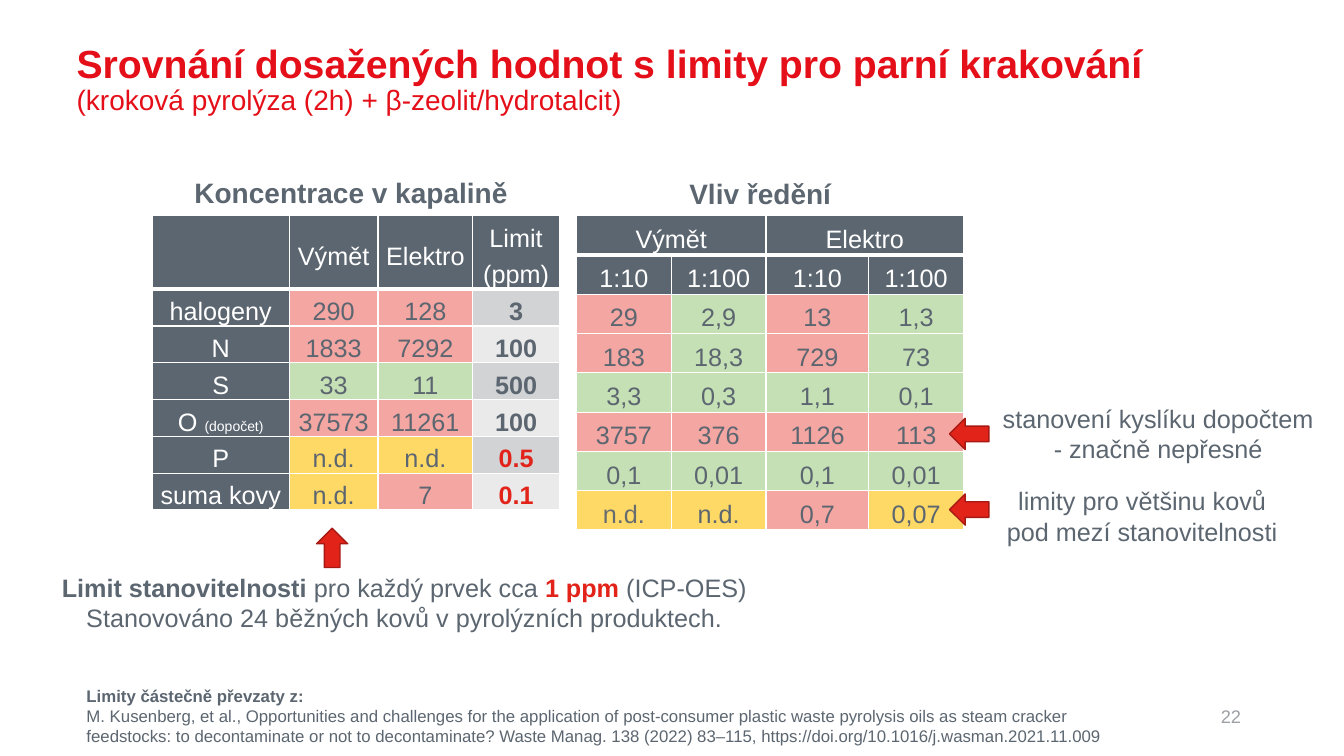
from dataclasses import dataclass

from lxml.etree import SubElement
from pptx import Presentation
from pptx.dml.color import RGBColor
from pptx.enum.shapes import MSO_SHAPE as Shape
from pptx.enum.text import MSO_ANCHOR as Anchor, MSO_AUTO_SIZE as AutoSize, PP_ALIGN as Align
from pptx.oxml.ns import qn
from pptx.util import Inches, Pt

# Grid: 133.33 columns by 75 rows
GRID = Inches(0.1)
SLIDE_COLUMNS, SLIDE_ROWS = 133.33, 75

SLATE, RED, TITLE_RED, WHITE = "5C6670", "E2231A", "E40F18", "FFFFFF"
ROSE, GREEN, YELLOW = "F4A6A2", "C5E0B4", "FFD966"
DARK_BAND, LIGHT_BAND = "D2D3D5", "EAEAEB"


@dataclass(frozen=True)
class Run:
    text: str
    size: float = 18
    color: str = SLATE
    bold: bool = False


@dataclass(frozen=True)
class Box:
    left: float
    top: float
    width: float
    height: float
    paragraphs: list[list[Run]]
    align: Align = Align.LEFT
    anchor: Anchor = Anchor.TOP
    grows: bool = True


@dataclass(frozen=True)
class Arrow:
    left: float
    top: float
    rotation: float


@dataclass(frozen=True)
class CellStyle:
    fill: str
    color: str = SLATE
    bold: bool = False


@dataclass(frozen=True)
class Row:
    styles: str
    texts: tuple[str, ...]


@dataclass(frozen=True)
class DataTable:
    left: float
    top: float
    widths: tuple[float, ...]
    heights: tuple[float, ...]
    rows: list[Row]
    header_spans: tuple[tuple[int, int], ...] = ()


# One letter per cell style
CELL_STYLES = {
    "h": CellStyle(SLATE, WHITE),
    "r": CellStyle(ROSE),
    "g": CellStyle(GREEN),
    "y": CellStyle(YELLOW),
    "u": CellStyle(YELLOW, "676D6F"),
    "d": CellStyle(DARK_BAND, bold=True),
    "l": CellStyle(LIGHT_BAND, bold=True),
    "D": CellStyle(DARK_BAND, RED, True),
    "L": CellStyle(LIGHT_BAND, RED, True),
}

TITLE = [
    [Run("Srovnání dosažených hodnot s limity pro parní krakování", 28, TITLE_RED, True)],
    [Run("(kroková pyrolýza (2h) + β-zeolit/hydrotalcit)", 20, TITLE_RED)],
]

# A bar in a cell starts its small print
TABLES = [
    DataTable(15.1, 21.4, (13.6, 8.8, 9.4, 8.6), (7.3,) + (3.65,) * 6, [
        Row("hhhh", ("", "Výmět", "Elektro", "Limit (ppm)")),
        Row("hrrd", ("halogeny", "290", "128", "3")),
        Row("hrrl", ("N", "1833", "7292", "100")),
        Row("hggd", ("S", "33", "11", "500")),
        Row("hrrl", ("O |(dopočet)", "37573", "11261", "100")),
        Row("hyyD", ("P", "n.d.", "n.d.", "0.5")),
        Row("hyrL", ("suma kovy", "n.d.", "7", "0.1")),
    ]),
    DataTable(57.2, 21.4, (9.4, 9.4, 10.2, 9.4), (3.9,) * 8, [
        Row("hhhh", ("Výmět", "", "Elektro", "")),
        Row("hhhh", ("1:10", "1:100") * 2),
        Row("rgrg", ("29", "2,9", "13", "1,3")),
        Row("rgrg", ("183", "18,3", "729", "73")),
        Row("gggg", ("3,3", "0,3", "1,1", "0,1")),
        Row("rrrr", ("3757", "376", "1126", "113")),
        Row("gggg", ("0,1", "0,01") * 2),
        Row("uyry", ("n.d.", "n.d.", "0,7", "0,07")),
    ], header_spans=((0, 1), (2, 3))),
]

BOXES = [
    Box(18.3, 16.9, 33.9, 4.4, [[Run("Koncentrace v kapalině", 20, bold=True)]]),
    Box(67.4, 17, 16.6, 4.4, [[Run("Vliv ředění", 20, bold=True)]]),
    Box(3.7, 56.3, 72.8, 7.1, [
        [Run("Limit stanovitelnosti ", bold=True), Run("pro každý prvek cca "),
         Run("1 ppm ", color=RED, bold=True), Run("(ICP-OES)")],
        [Run("Stanovováno 24 běžných kovů v pyrolýzních produktech.")],
    ], Align.CENTER),
    Box(98.1, 39.5, 33.6, 7.1,
        [[Run("stanovení kyslíku dopočtem - značně nepřesné")]], Align.CENTER),
    Box(98.2, 47.7, 30.2, 7.1,
        [[Run("limity pro většinu kovů pod mezí stanovitelnosti")]], Align.CENTER),
    Box(7.6, 67.5, 106.4, 7.1, [
        [Run("Limity částečně převzaty z:", 12, bold=True)],
        [Run("M. Kusenberg, et al., Opportunities and challenges for the application of "
             "post-consumer plastic waste pyrolysis oils as steam cracker feedstocks: to "
             "decontaminate or not to decontaminate? Waste Manag. 138 (2022) 83–115, "
             "https://doi.org/10.1016/j.wasman.2021.11.009", 12)],
    ]),
    Box(110.8, 69.9, 13.3, 2.4, [[Run("22", 13, "9CA0A4")]],
        Align.RIGHT, Anchor.MIDDLE, grows=False),
]

ARROWS = [Arrow(31, 52.8, 270), Arrow(94.2, 41.5, 180), Arrow(94.2, 49, 180)]


def grid(*units: float) -> list[int]:
    return [round(unit * GRID) for unit in units]


def rgb(value: str) -> RGBColor:
    return RGBColor.from_string(value)


def apply(target, formats: dict) -> None:
    for name, value in formats.items():
        setattr(target, name, value)


def write_runs(paragraph, runs: list[Run], formats: dict) -> None:
    apply(paragraph, formats)
    for item in runs:
        run = paragraph.add_run()
        run.text = item.text
        apply(run.font, {"name": "Arial", "size": Pt(item.size), "bold": item.bold})
        run.font.color.rgb = rgb(item.color)


def write_paragraphs(frame, paragraphs: list[list[Run]], formats: dict) -> None:
    for index, runs in enumerate(paragraphs):
        paragraph = frame.add_paragraph() if index else frame.paragraphs[0]
        write_runs(paragraph, runs, formats)


def place_title(slide) -> None:
    title = slide.shapes.title
    title.left, title.top, title.width, title.height = grid(7.6, 4.4, 118.9, 8.3)
    apply(title.text_frame, {
        "margin_left": 0, "margin_top": 0, "margin_right": 0, "margin_bottom": 0,
        "vertical_anchor": Anchor.TOP, "word_wrap": True, "auto_size": AutoSize.NONE})
    write_paragraphs(title.text_frame, TITLE, {
        "alignment": Align.LEFT, "line_spacing": 0.9, "space_before": Pt(0)})


def draw_box(slide, box: Box) -> None:
    shape = slide.shapes.add_textbox(*grid(box.left, box.top, box.width, box.height))
    apply(shape.text_frame, {
        "word_wrap": True, "vertical_anchor": box.anchor,
        "auto_size": AutoSize.SHAPE_TO_FIT_TEXT if box.grows else AutoSize.NONE})
    write_paragraphs(shape.text_frame, box.paragraphs, {"alignment": box.align})


def draw_arrow(slide, arrow: Arrow) -> None:
    shape = slide.shapes.add_shape(Shape.RIGHT_ARROW, *grid(arrow.left, arrow.top, 3.9, 3.1))
    apply(shape, {"rotation": arrow.rotation})
    shape.shadow.inherit = False
    shape.fill.solid()
    shape.fill.fore_color.rgb = rgb(RED)
    shape.line.color.rgb = rgb("A71A13")
    shape.line.width = Pt(1)


def add_borders(cell, top: float, bottom: float) -> None:
    properties = cell._tc.get_or_add_tcPr()
    sides = {"a:lnL": 1, "a:lnR": 1, "a:lnT": top, "a:lnB": bottom}
    for index, (tag, width) in enumerate(sides.items()):
        line = SubElement(properties, qn(tag), w=str(Pt(width)))
        SubElement(SubElement(line, qn("a:solidFill")), qn("a:srgbClr"), val=WHITE)
        properties.insert(index, line)  # borders precede the fill


def fill_cell(cell, text: str, style: CellStyle) -> None:
    apply(cell, {
        "margin_left": Inches(0.05), "margin_right": Inches(0.05),
        "margin_top": 0, "margin_bottom": 0, "vertical_anchor": Anchor.MIDDLE})
    cell.fill.solid()
    cell.fill.fore_color.rgb = rgb(style.fill)
    runs = [Run(part, size, style.color, style.bold)
            for part, size in zip(text.split("|"), (18, 10)) if part]
    write_runs(cell.text_frame.paragraphs[0], runs,
               {"alignment": Align.CENTER, "line_spacing": 1.3})


def draw_table(slide, data: DataTable) -> None:
    frame = slide.shapes.add_table(
        len(data.heights), len(data.widths),
        *grid(data.left, data.top, sum(data.widths), sum(data.heights)))
    table = frame.table
    for column, width in zip(table.columns, grid(*data.widths)):
        column.width = width
    for row, height in zip(table.rows, grid(*data.heights)):
        row.height = height
    for row_index, row in enumerate(data.rows):
        for column_index, (code, text) in enumerate(zip(row.styles, row.texts)):
            cell = table.cell(row_index, column_index)
            fill_cell(cell, text, CELL_STYLES[code])
            add_borders(cell, 3 if row_index == 1 else 1, 3 if row_index == 0 else 1)
    for first, last in data.header_spans:
        table.cell(0, first).merge(table.cell(0, last))


def main() -> None:
    presentation = Presentation()
    presentation.slide_width, presentation.slide_height = grid(SLIDE_COLUMNS, SLIDE_ROWS)
    slide = presentation.slides.add_slide(presentation.slide_layouts[5])
    place_title(slide)
    for data in TABLES:
        draw_table(slide, data)
    for box in BOXES:
        draw_box(slide, box)
    for arrow in ARROWS:
        draw_arrow(slide, arrow)
    presentation.save("out.pptx")


if __name__ == "__main__":
    main()
